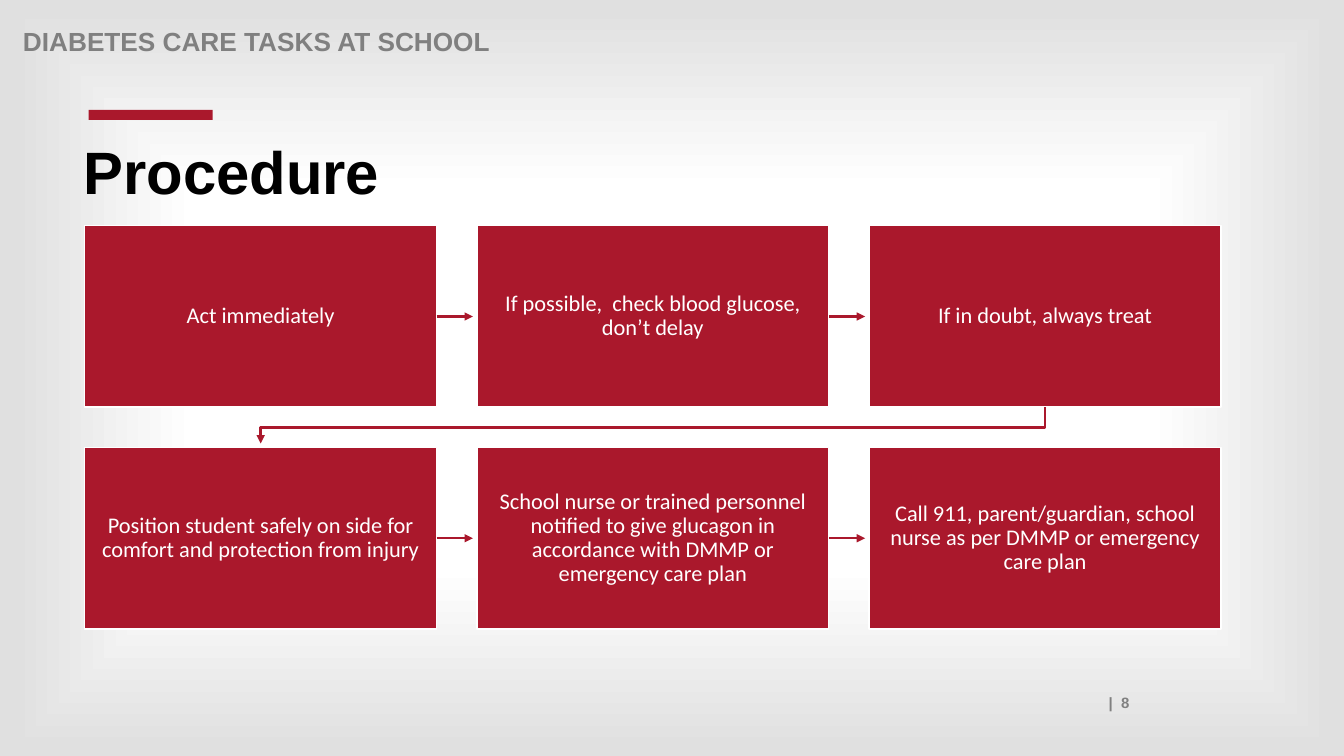
from lxml.etree import SubElement
from pptx import Presentation
from pptx.dml.color import RGBColor
from pptx.enum.shapes import MSO_CONNECTOR, MSO_SHAPE
from pptx.enum.text import MSO_ANCHOR, MSO_AUTO_SIZE, PP_ALIGN
from pptx.oxml import parse_xml
from pptx.oxml.ns import nsdecls, qn
from pptx.util import Inches, Pt

COLORS = {"red": "AA182C", "white": "FFFFFF", "gray": "808080",
          "black": "000000", "edge": "E0E0E0"}
STEPS = [
    "Act immediately",
    "If possible,  check blood glucose, don’t delay",
    "If in doubt, always treat",
    "Position student safely on side for comfort and protection from injury",
    "School nurse or trained personnel notified to give glucagon in "
    "accordance with DMMP or emergency care plan",
    "Call 911, parent/guardian, school nurse as per DMMP or emergency care plan",
]


def rgb(name):
    return RGBColor.from_string(COLORS[name])


def write(shape, text, size, color, font="Arial", bold=True, align=PP_ALIGN.LEFT,
          anchor=MSO_ANCHOR.TOP, inset=(0.1, 0.05), spacing=0.9):
    tf = shape.text_frame
    tf.word_wrap = True
    tf.auto_size = MSO_AUTO_SIZE.NONE
    tf.vertical_anchor = anchor
    tf.margin_left = tf.margin_right = Inches(inset[0])
    tf.margin_top = tf.margin_bottom = Inches(inset[1])
    p = tf.paragraphs[0]
    p.alignment = align
    p.line_spacing = spacing
    r = p.add_run()
    r.text = text
    r.font.name, r.font.size, r.font.bold = font, Pt(size), bold
    r.font.color.rgb = rgb(color)


def add_box(s, left, top, width, height):
    sp = s.shapes.add_shape(MSO_SHAPE.RECTANGLE, Inches(left), Inches(top),
                            Inches(width), Inches(height))
    sp.shadow.inherit = False
    sp.fill.solid()
    sp.fill.fore_color.rgb = rgb("red")
    sp.line.fill.background()
    return sp


def style_arrow(sp):
    sp.line.color.rgb = rgb("red")
    sp.line.width = Pt(1.75)
    SubElement(sp.line._get_or_add_ln(), qn("a:tailEnd"), type="triangle")
    if sp.element.spPr.find(qn("a:effectLst")) is None:
        SubElement(sp.element.spPr, qn("a:effectLst"))


def paint_background(s):
    """Fill the slide with a gradient that darkens from the centre outwards."""
    s.background.fill.gradient()
    old = s.element.find(".//" + qn("a:gradFill"))
    stops = "".join(
        f'<a:gs pos="{pos * 1000}"><a:srgbClr val="{COLORS[color]}"/></a:gs>'
        for pos, color in [(12, "white"), (50, "white"), (98, "edge")])
    old.getparent().replace(old, parse_xml(
        f'<a:gradFill {nsdecls("a")} rotWithShape="1"><a:gsLst>{stops}</a:gsLst>'
        '<a:path path="shape"><a:fillToRect l="50000" t="50000" r="50000" b="50000"/>'
        '</a:path></a:gradFill>'))


def add_label(s, text, left, top, width, height, size, **fmt):
    box = s.shapes.add_textbox(Inches(left), Inches(top), Inches(width), Inches(height))
    write(box, text, size, "gray", **fmt)


def add_title(s, text, left, top, width, height):
    title = s.shapes.title
    title.left, title.top = Inches(left), Inches(top)
    title.width, title.height = Inches(width), Inches(height)
    write(title, text, 42.7, "black")
    add_box(s, left + 0.15, top - 0.28, 1.23, 0.1)


def add_process(s, steps, left, top, width, height, cols=3, gap=0.4, clearance=0.04):
    """Lay the steps out row by row and link each one to the next."""
    rows = len(steps) // cols
    w = (width - gap * (cols - 1)) / cols
    h = (height - gap * (rows - 1)) / rows
    for i, text in enumerate(steps):
        row, col = divmod(i, cols)
        x, y = left + col * (w + gap), top + row * (h + gap)
        card = add_box(s, x, y, w, h)
        card.line.color.rgb = rgb("white")
        card.line.width = Pt(1)
        write(card, text, 16, "white", font="Calibri", bold=False,
              align=PP_ALIGN.CENTER, anchor=MSO_ANCHOR.MIDDLE, inset=(0.12, 0.12))
        if col < cols - 1:
            mid = Inches(y + h / 2)
            arrow = s.shapes.add_connector(MSO_CONNECTOR.STRAIGHT, Inches(x + w), mid,
                                           Inches(x + w + gap - clearance), mid)
            arrow.begin_connect(card, 3)
            style_arrow(arrow)
        elif row < rows - 1:
            start, end, bottom = x + w / 2, left + w / 2, y + h
            turn = bottom + gap / 2
            fb = s.shapes.build_freeform(Inches(start), Inches(bottom))
            fb.add_line_segments(
                [(Inches(start), Inches(turn)), (Inches(end), Inches(turn)),
                 (Inches(end), Inches(bottom + gap - clearance))], close=False)
            bend = fb.convert_to_shape()
            bend.fill.background()
            style_arrow(bend)


def main():
    prs = Presentation()
    prs.slide_width, prs.slide_height = Inches(13.33), Inches(7.5)
    s = prs.slides.add_slide(prs.slide_layouts[5])
    paint_background(s)
    add_label(s, "DIABETES CARE TASKS AT SCHOOL", 0.13, 0.24, 11, 0.28, 18.7)
    add_title(s, "Procedure", 0.73, 1.37, 11.03, 1.3)
    add_process(s, STEPS, 0.84, 2.24, 11.27, 4)
    add_label(s, "|  8", 1.21, 6.83, 10.09, 0.28, 10.7, align=PP_ALIGN.RIGHT, spacing=1.0)
    prs.save("out.pptx")


if __name__ == "__main__":
    main()
